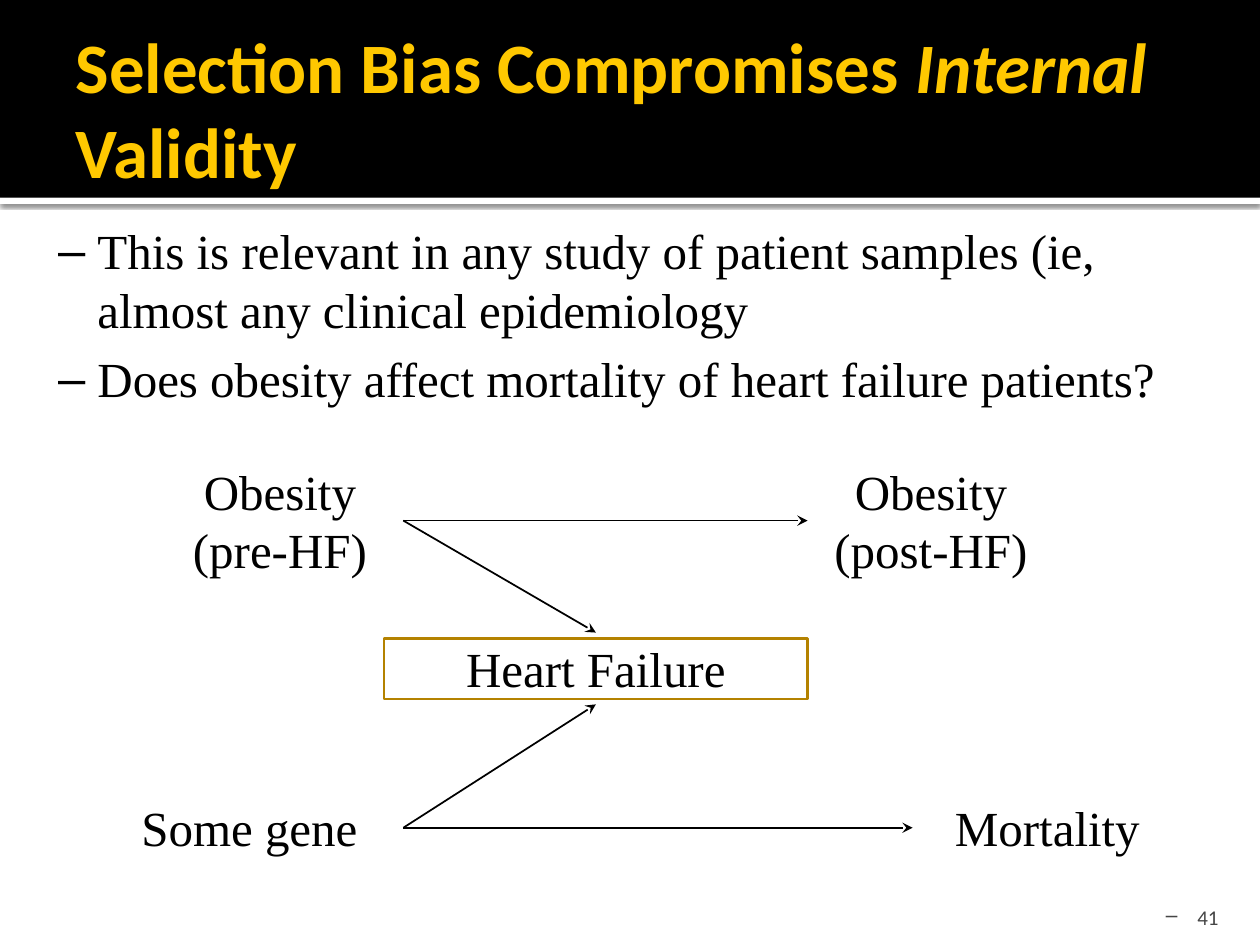
from pptx import Presentation
from pptx.dml.color import RGBColor
from pptx.enum.shapes import MSO_CONNECTOR, MSO_SHAPE
from pptx.enum.text import MSO_ANCHOR, MSO_AUTO_SIZE, PP_ALIGN
from pptx.oxml import parse_xml
from pptx.oxml.ns import nsdecls
from pptx.util import Pt

COLORS = {"band": "000000", "strip": "FFFFFF", "text": "000000",
          "title": "FFC800", "frame": "B48200", "number": "454545"}
SERIF, SANS = "Times New Roman", "Calibri"

TITLE = [("Selection Bias Compromises ", False), ("Internal", True), (" Validity", False)]
POINTS = [
    "This is relevant in any study of patient samples (ie, almost any clinical epidemiology",
    "Does obesity affect mortality of heart failure patients?",
]
LABELS = [
    ("Heart Failure", 221, 361.5, 239, 41),
    ("Mortality", 521.5, 452, 154, 41),
    ("Obesity (pre-HF)", 89.5, 260, 141, 75),
    ("Some gene", 54.5, 452, 176, 41),
    ("Obesity (post-HF)", 461.5, 260, 141, 75),
]
OBESITY, GENE = (230.5, 297.5), (230.5, 473)
ARROWS = [
    (GENE, (340.5, 402.5)),
    (GENE, (521.5, 473)),
    (OBESITY, (340.5, 361.5)),
    (OBESITY, (461.5, 297.5)),
]


def rgb(name):
    return RGBColor.from_string(COLORS[name])


def place(shape, x, y, w, h):
    for name, value in {"left": x, "top": y, "width": w, "height": h}.items():
        setattr(shape, name, Pt(value))


def set_frame(tf, margins=(7.2, 3.6, 7.2, 3.6), **formats):
    formats = {"word_wrap": True, "auto_size": MSO_AUTO_SIZE.NONE,
               "vertical_anchor": MSO_ANCHOR.TOP} | formats
    for side, value in zip(("left", "top", "right", "bottom"), margins):
        formats[f"margin_{side}"] = Pt(value)
    for name, value in formats.items():
        setattr(tf, name, value)


def add_run(p, text, size, font, color, **formats):
    r = p.add_run()
    r.text = text
    for name, value in ({"size": Pt(size), "name": font} | formats).items():
        setattr(r.font, name, value)
    r.font.color.rgb = rgb(color)


def add_dash(p, indent):
    pPr = p._p.get_or_add_pPr()
    pPr.set("marL", str(Pt(indent)))
    pPr.set("indent", str(-Pt(indent)))
    pPr.append(parse_xml(f'<a:buChar {nsdecls("a")} char="–"/>'))


def add_rect(s, box, fill=None, line=None):
    sp = s.shapes.add_shape(MSO_SHAPE.RECTANGLE, *map(Pt, box))
    sp.shadow.inherit = False
    if fill:
        sp.fill.solid()
        sp.fill.fore_color.rgb = rgb(fill)
    else:
        sp.fill.background()
    if line:
        sp.line.color.rgb = rgb(line)
        sp.line.width = Pt(1.5)
    else:
        sp.line.fill.background()
    return sp


def add_header(s):
    strip = add_rect(s, (0, 113, 720, 3.6), "strip")
    strip._element.spPr.find("{*}effectLst").append(parse_xml(
        f'<a:outerShdw {nsdecls("a")} blurRad="{Pt(2.5)}" dist="{Pt(0.8)}" dir="5400000">'
        '<a:srgbClr val="000000"><a:alpha val="60000"/></a:srgbClr></a:outerShdw>'))
    band = add_rect(s, (0, 0, 720, 113), "band")
    for sp in (band, strip):
        s.shapes._spTree.insert(2, sp._element)

    title = s.shapes.title
    place(title, 36, 12.5, 648, 98.5)
    set_frame(title.text_frame, (7.2, 3.6, 3.6, 3.6), vertical_anchor=MSO_ANCHOR.MIDDLE)
    p = title.text_frame.paragraphs[0]
    p.alignment = PP_ALIGN.LEFT
    for text, italic in TITLE:
        add_run(p, text, 40.5, SANS, "title", bold=True, italic=italic)


def add_points(s):
    body = s.placeholders[1]
    place(body, 26, 122.5, 676, 116)
    tf = body.text_frame
    set_frame(tf)
    for i, text in enumerate(POINTS):
        p = tf.add_paragraph() if i else tf.paragraphs[0]
        p.space_before = Pt(6)
        add_dash(p, 22.5)
        add_run(p, text, 28, SERIF, "text")


def add_label(s, text, *box):
    tf = s.shapes.add_textbox(*map(Pt, box)).text_frame
    set_frame(tf)
    p = tf.paragraphs[0]
    p.alignment = PP_ALIGN.CENTER
    add_run(p, text, 28, SERIF, "text")


def add_arrow(s, start, end):
    line = s.shapes.add_connector(MSO_CONNECTOR.STRAIGHT, *map(Pt, start + end))
    line.line.color.rgb = rgb("text")
    line.line.width = Pt(1)
    line.line._get_or_add_ln().append(
        parse_xml(f'<a:tailEnd {nsdecls("a")} type="stealth"/>'))
    line._element.spPr.append(parse_xml(f'<a:effectLst {nsdecls("a")}/>'))


def add_number(s):
    tf = s.shapes.add_textbox(Pt(646), Pt(510), Pt(57.5), Pt(21.5)).text_frame
    set_frame(tf, (7.2, 3.6, 7.2, 0), vertical_anchor=MSO_ANCHOR.BOTTOM)
    p = tf.paragraphs[0]
    p.alignment = PP_ALIGN.RIGHT
    add_dash(p, 18)
    add_run(p, "41", 12, SANS, "number")


def main():
    prs = Presentation()
    prs.slide_width, prs.slide_height = Pt(720), Pt(540)
    s = prs.slides.add_slide(prs.slide_layouts[1])
    add_header(s)
    add_points(s)
    add_rect(s, (219.5, 365, 242, 34.5), line="frame")
    for label in LABELS:
        add_label(s, *label)
    for start, end in ARROWS:
        add_arrow(s, start, end)
    add_number(s)
    prs.save("out.pptx")


if __name__ == "__main__":
    main()
